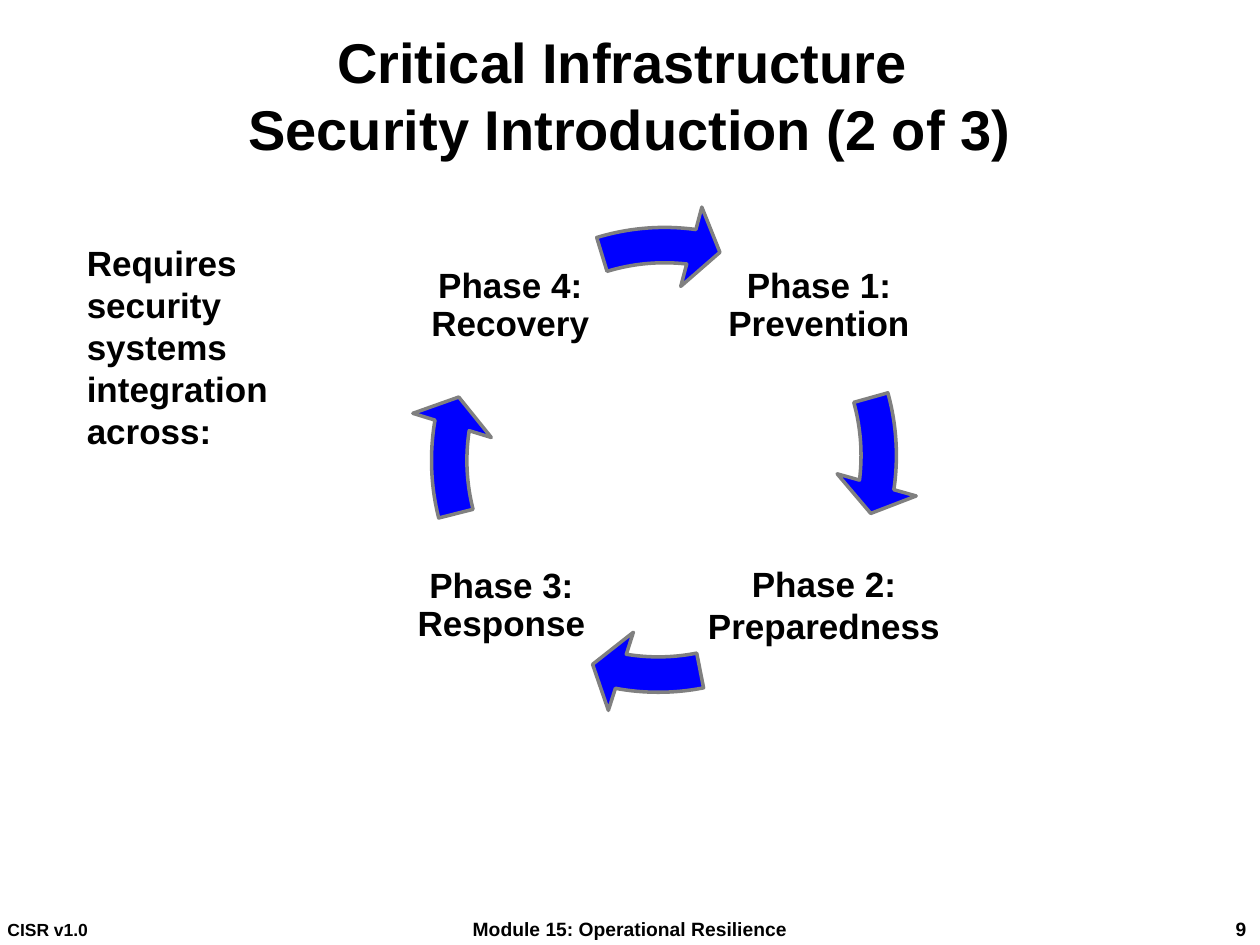
import pptx
import pptx.util
import pptx.dml.color
import pptx.enum.shapes
import pptx.enum.text

Inches = pptx.util.Inches
Pt = pptx.util.Pt
ALIGN = pptx.enum.text.PP_ALIGN
ANCHOR = pptx.enum.text.MSO_ANCHOR
AUTO_SIZE = pptx.enum.text.MSO_AUTO_SIZE

BLACK = pptx.dml.color.RGBColor(0x00, 0x00, 0x00)
BLUE = pptx.dml.color.RGBColor(0x00, 0x00, 0xFF)
GRAY = pptx.dml.color.RGBColor(0x80, 0x80, 0x80)


def write(s, lines, size, align, margins, anchor=ANCHOR.MIDDLE, wrap=True, spacing=None):
    """Fill a shape with bold Arial lines; margins are left, top, right, bottom."""
    tf = s.text_frame
    tf.auto_size = AUTO_SIZE.NONE
    tf.word_wrap = wrap
    tf.vertical_anchor = anchor
    tf.margin_left, tf.margin_top, tf.margin_right, tf.margin_bottom = map(Inches, margins)
    p = tf.paragraphs[0]
    p.alignment = align
    if spacing:
        p.line_spacing = spacing
    for i, line in enumerate(lines):
        if i:
            p.add_line_break()
        r = p.add_run()
        r.text = line
        r.font.name = "Arial"
        r.font.size = Pt(size)
        r.font.bold = True
        r.font.color.rgb = BLACK


prs = pptx.Presentation()
prs.slide_width = Inches(10)
prs.slide_height = Inches(7.5)
slide = prs.slides.add_slide(prs.slide_layouts[5])

# Title
title = slide.shapes.title
title.left, title.top, title.width, title.height = map(Inches, (0.45, 0.25, 9.1, 1))
write(title, ["Critical Infrastructure ", "Security Introduction (2 of 3)"],
      32, ALIGN.CENTER, [0.01] * 4)

# Cycle: each phase label, then the arrow that leads on from it
# label, label left, top, width, line spacing, arrow left, top, head and tail angles
phases = [
    ("Phase 1: Prevention", 5.72, 1.71, 1.56, 0.9, 3.23, 1.58, 7.87, 344.43),
    ("Phase 2: Preparedness", 5.56, 4.08, 1.96, None, 3.19, 1.61, 100.01, 78.8),
    ("Phase 3: Response", 3.26, 4.09, 1.44, 0.9, 3.24, 1.62, 189.37, 165.71),
    ("Phase 4: Recovery", 3.33, 1.71, 1.44, 0.9, 3.24, 1.62, 277.12, 253.07),
]
RING = Inches(4.07)
UNITS_PER_DEGREE = 0.6  # angle adjustments count 60000ths of a degree, scaled by 100000

for label, left, top, width, spacing, ring_left, ring_top, head, tail in phases:
    s = slide.shapes.add_textbox(Inches(left), Inches(top), Inches(width), Inches(1.44))
    write(s, [label], 20, ALIGN.CENTER, [0.03] * 4, spacing=spacing)

    arrow = slide.shapes.add_shape(pptx.enum.shapes.MSO_SHAPE.CIRCULAR_ARROW,
                                   Inches(ring_left), Inches(ring_top), RING, RING)
    arrow.shadow.inherit = False
    arrow.fill.solid()
    arrow.fill.fore_color.rgb = BLUE
    arrow.line.color.rgb = GRAY
    arrow.line.width = Pt(2)
    angles = [angle * UNITS_PER_DEGREE for angle in (7.75, head, tail)]
    for i, value in enumerate([0.069, *angles, 0.08]):
        arrow.adjustments[i] = value

# Footer
footers = [
    ("Module 15: Operational Resilience", 3.25, 3.5, 11, ALIGN.CENTER, (0.1, 0.01, 0.1, 0.01)),
    ("CISR v1.0", 0.05, 3.1, 10, ALIGN.LEFT, (0.01, 0.01, 0.05, 0.01)),
    (" 9", 9.55, 0.44, 11, ALIGN.RIGHT, (0.1, 0.01, 0.1, 0.01)),
]
for text, left, width, size, align, margins in footers:
    s = slide.shapes.add_textbox(Inches(left), Inches(7.25), Inches(width), Inches(0.25))
    # A box that does not wrap is centred on its text, so only the centred one may skip wrapping
    write(s, [text], size, align, margins, wrap=align != ALIGN.CENTER)

# Lead-in beside the cycle
s = slide.shapes.add_textbox(Inches(0.59), Inches(1.87), Inches(2.01), Inches(1.78))
write(s, ["Requires security systems integration across:"], 20, ALIGN.LEFT,
      (0.1, 0.05, 0.1, 0.05), anchor=ANCHOR.TOP)
s.text_frame.auto_size = AUTO_SIZE.SHAPE_TO_FIT_TEXT

prs.save("out.pptx")
